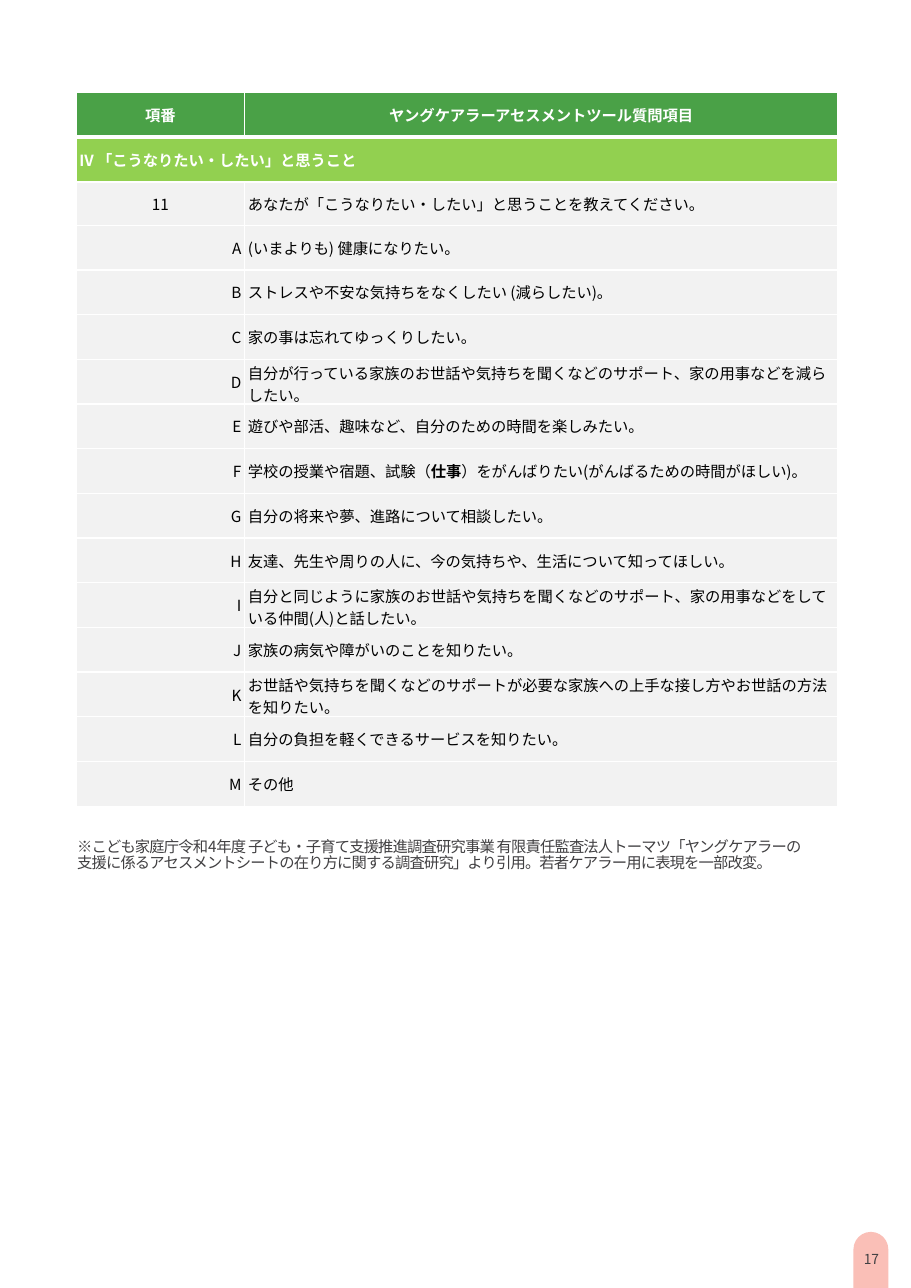
from lxml import etree
from pptx import Presentation
from pptx.dml.color import RGBColor
from pptx.enum import shapes, text
from pptx.oxml import ns
from pptx.util import Pt

HEAD = ("項番", "ヤングケアラーアセスメントツール質問項目")
PART = "IV 「こうなりたい・したい」と思うこと"
ASK = ("11", "あなたが「こうなりたい・したい」と思うことを教えてください。")
WISHES = [
    "(いまよりも) 健康になりたい。",
    "ストレスや不安な気持ちをなくしたい (減らしたい)。",
    "家の事は忘れてゆっくりしたい。",
    "自分が行っている家族のお世話や気持ちを聞くなどのサポート、家の用事などを減らしたい。",
    "遊びや部活、趣味など、自分のための時間を楽しみたい。",
    "学校の授業や宿題、試験（*仕事*）をがんばりたい(がんばるための時間がほしい)。",
    "自分の将来や夢、進路について相談したい。",
    "友達、先生や周りの人に、今の気持ちや、生活について知ってほしい。",
    "自分と同じように家族のお世話や気持ちを聞くなどのサポート、家の用事などをしている仲間(人)と話したい。",
    "家族の病気や障がいのことを知りたい。",
    "お世話や気持ちを聞くなどのサポートが必要な家族への上手な接し方やお世話の方法を知りたい。",
    "自分の負担を軽くできるサービスを知りたい。",
    "その他",
]
NOTE = ("※こども家庭庁令和4年度 子ども・子育て支援推進調査研究事業 "
        "有限責任監査法人トーマツ「ヤングケアラーの支援に係るアセスメントシートの在り方に関する調査研究」"
        "より引用。若者ケアラー用に表現を一部改変。")
PAGE = "17"

FONT = "Noto Sans CJK JP"
GREEN = RGBColor(0x4A, 0xA1, 0x47)
LIME = RGBColor(0x92, 0xD0, 0x50)
PALE = RGBColor(0xF2, 0xF2, 0xF2)
PINK = RGBColor(0xFA, 0xBF, 0xB7)
GRAY = RGBColor(0x41, 0x40, 0x42)
WHITE = RGBColor(255, 255, 255)
BLACK = RGBColor(0, 0, 0)
LEFT, MID, RIGHT = text.PP_ALIGN.LEFT, text.PP_ALIGN.CENTER, text.PP_ALIGN.RIGHT
COLS = (110.2, 387.3)
ROW = 29.2


def write(frame, words, size, color, align, bold=False, space=None):
    para = frame.paragraphs[0]
    para.alignment = align
    for i, part in enumerate(words.split("*")):
        run = para.add_run()
        run.text = part
        if i % 2:
            run.font.bold = True
    font = para.font
    font.name, font.size, font.bold = FONT, Pt(size), bold
    font.color.rgb = color
    props = para._p.pPr.find(ns.qn("a:defRPr"))
    props.find(ns.qn("a:latin")).addnext(
        etree.Element(ns.qn("a:ea"), typeface=FONT))
    if space:
        props.set("spc", str(int(space * 100)))
    return para


def edge(cell, top, base):
    props = cell._tc.get_or_add_tcPr()
    for side, width in zip("LRTB", (1, 1, top, base)):
        line = etree.SubElement(props, ns.qn("a:ln" + side), w=str(Pt(width)))
        fill = etree.SubElement(line, ns.qn("a:solidFill"))
        etree.SubElement(fill, ns.qn("a:srgbClr"), val=str(WHITE))


def add_box(slide, left, top, width, height):
    frame = slide.shapes.add_textbox(
        Pt(left), Pt(top), Pt(width), Pt(height)).text_frame
    frame.word_wrap = True
    frame.margin_left = frame.margin_right = 0
    frame.margin_top = frame.margin_bottom = 0
    return frame


def add_grid(slide):
    rows = [HEAD, (PART, ""), ASK]
    rows += [(chr(ord("A") + i), wish) for i, wish in enumerate(WISHES)]
    grid = slide.shapes.add_table(
        len(rows), 2, Pt(49.7), Pt(60.5), Pt(sum(COLS)), Pt(ROW * len(rows))).table
    grid.horz_banding = False
    for col, width in zip(grid.columns, COLS):
        col.width = Pt(width)
    for r, row in enumerate(rows):
        grid.rows[r].height = Pt(28.4 if r == 2 else ROW)
        fill = (GREEN, LIME, PALE)[min(r, 2)]
        color = WHITE if r < 2 else BLACK
        aligns = {0: (MID, MID), 1: (LEFT, LEFT), 2: (MID, LEFT)}.get(r, (RIGHT, LEFT))
        for c, words in enumerate(row):
            cell = grid.cell(r, c)
            cell.vertical_anchor = text.MSO_ANCHOR.MIDDLE
            cell.margin_left = cell.margin_right = Pt(2.16)
            cell.margin_top = cell.margin_bottom = Pt(1.44)
            edge(cell, 3 if r == 1 else 1, 3 if r == 0 else 1)
            cell.fill.solid()
            cell.fill.fore_color.rgb = fill
            if words:
                write(cell.text_frame, words, 10, color, aligns[c], r < 2)
    grid.cell(1, 0).merge(grid.cell(1, 1))


def add_page(slide):
    tab = slide.shapes.add_shape(
        shapes.MSO_SHAPE.ROUND_2_SAME_RECTANGLE, Pt(557.8), Pt(805), Pt(22.8), Pt(36.7))
    tab.adjustments[0], tab.adjustments[1] = 0.5, 0
    tab.shadow.inherit = False
    tab.fill.solid()
    tab.fill.fore_color.rgb = PINK
    tab.line.fill.background()
    frame = add_box(slide, 561.6, 816.5, 15.8, 12.2)
    frame.vertical_anchor = text.MSO_ANCHOR.MIDDLE
    write(frame, PAGE, 9, GRAY, MID)


def main():
    deck = Presentation()
    deck.slide_width, deck.slide_height = Pt(595.4), Pt(841.7)
    slide = deck.slides.add_slide(deck.slide_layouts[6])
    add_page(slide)
    add_grid(slide)
    frame = add_box(slide, 49.7, 547.9, 476.6, 25.2)
    frame.margin_left, frame.margin_top = Pt(0.72), Pt(0.72)
    write(frame, NOTE, 10, GRAY, LEFT, space=-0.5).line_spacing = 0.86
    deck.save("out.pptx")


if __name__ == "__main__":
    main()
